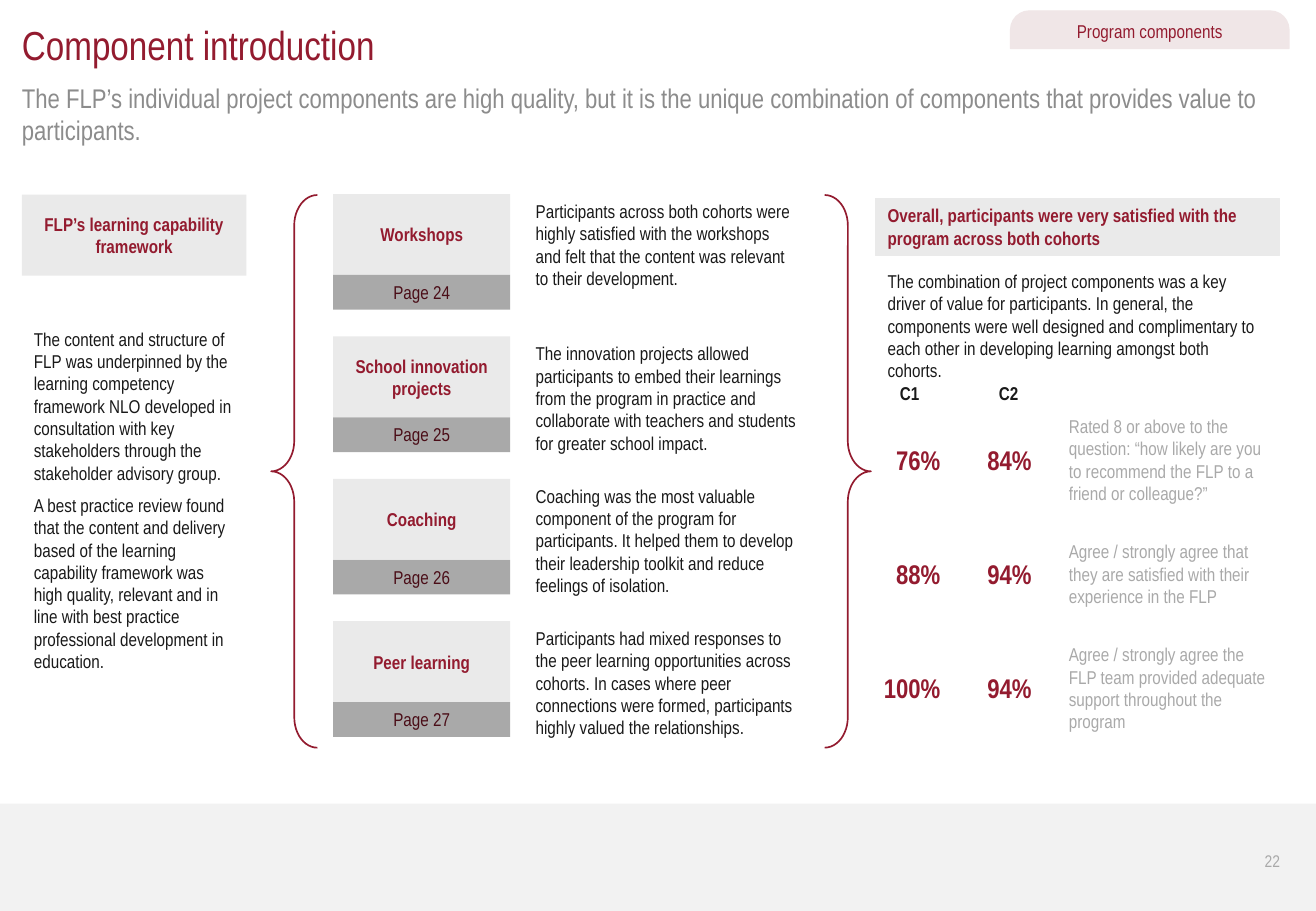
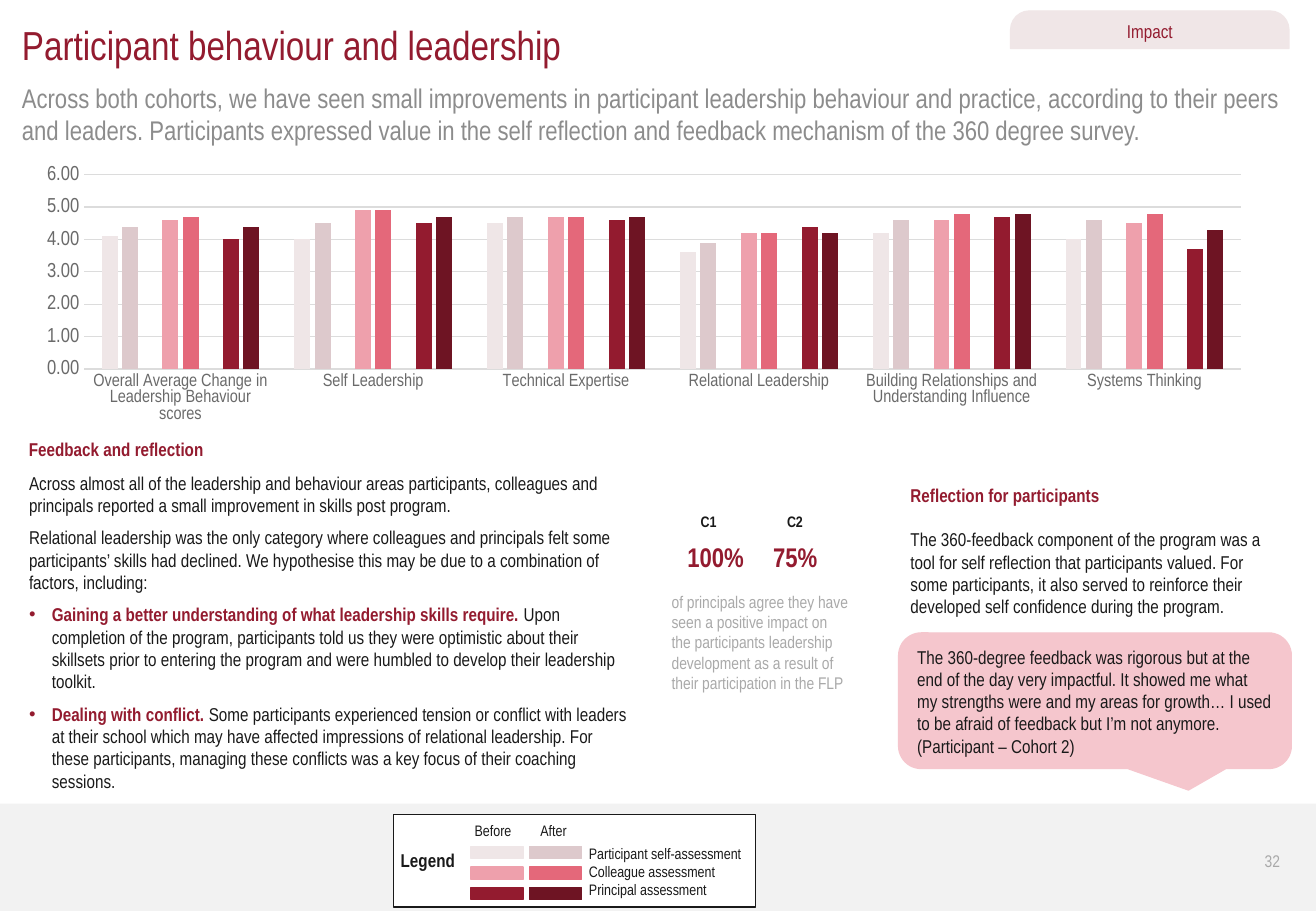
from lxml.etree import SubElement
from pptx import Presentation
from pptx.chart.data import CategoryChartData
from pptx.dml.color import RGBColor
from pptx.enum.chart import XL_CHART_TYPE, XL_TICK_MARK
from pptx.enum.shapes import MSO_SHAPE
from pptx.enum.text import MSO_ANCHOR, MSO_AUTO_SIZE, PP_ALIGN
from pptx.oxml.ns import qn
from pptx.util import Pt

FONT = "Arial Narrow"
CRIMSON, DARK_CRIMSON, INK = "931B2F", "4A0D17", "191919"
GREY, MID_GREY, AXIS_GREY, GRID_GREY = "8C8C8C", "A9A9A9", "6A6A6A", "DCDCDC"
PANEL, BAND, TAB, WHITE, PINK = "EAEAEA", "F2F2F2", "F0E6E7", "FFFFFF", "F5C6CD"
SELF_TINTS = ("EFE6E7", "DDC9CC")
COLLEAGUE_TINTS = ("EEA0AC", "E4687A")
PRINCIPAL_TINTS = (CRIMSON, "6E1423")
LEFT, CENTER, RIGHT = PP_ALIGN.LEFT, PP_ALIGN.CENTER, PP_ALIGN.RIGHT
TOP, MIDDLE, BOTTOM = MSO_ANCHOR.TOP, MSO_ANCHOR.MIDDLE, MSO_ANCHOR.BOTTOM
MARGIN = 13


def rgb(code):
    return RGBColor.from_string(code)


def points(*lengths):
    return [Pt(length) for length in lengths]


def style_font(font, size, color, bold=False):
    font.name = FONT
    font.size = Pt(size)
    font.bold = bold
    font.color.rgb = rgb(color)


def set_bullet(paragraph, bulleted):
    properties = paragraph._p.get_or_add_pPr()
    indent = Pt(13.5) if bulleted else 0
    properties.set("marL", str(indent))
    properties.set("indent", str(-indent))
    if bulleted:
        bullet_color = SubElement(properties, qn("a:buClr"))
        SubElement(bullet_color, qn("a:srgbClr"), val=CRIMSON)
        SubElement(properties, qn("a:buFont"), typeface="Arial")
        SubElement(properties, qn("a:buChar"), char="•")
    else:
        SubElement(properties, qn("a:buNone"))


def write(shape, *paragraphs, size=11, color=INK, bold=False, align=LEFT,
          anchor=TOP, inset=(7.2, 3.6), wrap=True, after=0):
    frame = shape.text_frame
    frame.auto_size = MSO_AUTO_SIZE.NONE
    frame.word_wrap = wrap
    frame.vertical_anchor = anchor
    frame.margin_left = frame.margin_right = Pt(inset[0])
    frame.margin_top = frame.margin_bottom = Pt(inset[1])
    for index, content in enumerate(paragraphs):
        paragraph = frame.add_paragraph() if index else frame.paragraphs[0]
        bulleted = not isinstance(content, str)
        if bulleted or shape.is_placeholder:
            set_bullet(paragraph, bulleted)
        paragraph.alignment = align
        paragraph.space_before = Pt(0)
        paragraph.space_after = Pt(after)
        for words, run_color, run_bold in content if bulleted else [(content, color, bold)]:
            run = paragraph.add_run()
            run.text = words
            style_font(run.font, size, run_color, run_bold)


def add_text(slide, box, *paragraphs, **style):
    write(slide.shapes.add_textbox(*points(*box)), *paragraphs, **style)


def fill_placeholder(placeholder, box, *paragraphs, **style):
    placeholder.left, placeholder.top, placeholder.width, placeholder.height = points(*box)
    write(placeholder, *paragraphs, **style)


def add_block(slide, preset, box, fill=None, line=None, weight=0.75, adjustments=()):
    block = slide.shapes.add_shape(preset, *points(*box))
    block.shadow.inherit = False
    if fill:
        block.fill.solid()
        block.fill.fore_color.rgb = rgb(fill)
    else:
        block.fill.background()
    if line:
        block.line.color.rgb = rgb(line)
        block.line.width = Pt(weight)
    else:
        block.line.fill.background()
    for index, value in enumerate(adjustments):
        block.adjustments[index] = value
    return block


def start_slide(deck, layout, title, message, section, number):
    slide = deck.slides.add_slide(deck.slide_layouts.get_by_name(layout))
    add_block(slide, MSO_SHAPE.RECTANGLE, (0, 476.4, 780, 63.6), BAND)
    fill_placeholder(slide.shapes.title, (MARGIN, 12, 754, 29), title,
                     size=24, color=CRIMSON, inset=(0, 0))
    fill_placeholder(slide.placeholders[1], (MARGIN, 48.3, 754, 39), message,
                     size=16, color=GREY, inset=(0, 0), after=6)
    tab = add_block(slide, MSO_SHAPE.ROUND_2_SAME_RECTANGLE, (599, 6.5, 165, 22.3),
                    TAB, TAB, adjustments=(0.5, 0))
    write(tab, section, color=CRIMSON, align=CENTER, anchor=BOTTOM, after=6)
    add_text(slide, (739.2, 495.8, 26.6, 29), number, size=10, color=MID_GREY,
             align=RIGHT, anchor=MIDDLE)
    return slide


def add_component(slide, top, name, page, finding):
    heading = add_block(slide, MSO_SHAPE.RECTANGLE, (197.5, top, 105, 48), PANEL)
    write(heading, name, color=CRIMSON, bold=True, align=CENTER, anchor=MIDDLE,
          inset=(5.7, 3.6))
    page_bar = add_block(slide, MSO_SHAPE.RECTANGLE, (197.5, top + 48, 105, 20.6), MID_GREY)
    write(page_bar, page, color=DARK_CRIMSON, align=CENTER)
    add_text(slide, (310.4, top, 170, 74), finding, after=6)


def add_rating(slide, top, scores, question):
    for column, score in enumerate(scores):
        add_text(slide, (509.5 + 54 * column, top + 17, 55, 26.6), score,
                 size=16, color=CRIMSON, bold=True, align=RIGHT)
    add_text(slide, (626.4, top, 137, 60.5), question, color=MID_GREY, anchor=MIDDLE)


def build_components(deck):
    slide = start_slide(
        deck, "Title and Content", "Component introduction",
        "The FLP’s individual project components are high quality, but it is the unique "
        "combination of components that provides value to participants.",
        "Program components", "22")
    framework = add_block(slide, MSO_SHAPE.RECTANGLE, (MARGIN, 115.4, 133, 48), PANEL)
    write(framework, "FLP’s learning capability framework", color=CRIMSON, bold=True,
          align=CENTER, anchor=MIDDLE)
    add_text(slide, (MARGIN, 190.8, 133, 213),
             "The content and structure of FLP was underpinned by the learning competency "
             "framework NLO developed in consultation with key stakeholders through the "
             "stakeholder advisory group.",
             "A best practice review found that the content and delivery based of the "
             "learning capability framework was high quality, relevant and in line with best "
             "practice professional development in education.", after=6)

    components = [
        ("Workshops", "Participants across both cohorts were highly satisfied with the "
         "workshops and felt that the content was relevant to their development."),
        ("School innovation projects", "The innovation projects allowed participants to "
         "embed their learnings from the program in practice and collaborate with teachers "
         "and students for greater school impact."),
        ("Coaching", "Coaching was the most valuable component of the program for "
         "participants. It helped them to develop their leadership toolkit and reduce "
         "feelings of isolation."),
        ("Peer learning", "Participants had mixed responses to the peer learning "
         "opportunities across cohorts. In cases where peer connections were formed, "
         "participants highly valued the relationships."),
    ]
    for row, (name, finding) in enumerate(components):
        add_component(slide, 115 + 84.4 * row, name, f"Page {24 + row}", finding)
    for brace, left in ((MSO_SHAPE.LEFT_BRACE, 160.7), (MSO_SHAPE.RIGHT_BRACE, 488.8)):
        add_block(slide, brace, (left, 115.6, 27.4, 327.6), line=CRIMSON, weight=1,
                  adjustments=(0.658, 0.5))

    overall = add_block(slide, MSO_SHAPE.RECTANGLE, (519, 117.6, 239.5, 33.8), PANEL, PANEL)
    write(overall, "Overall, participants were very satisfied with the program across both "
          "cohorts", color=CRIMSON, bold=True)
    add_text(slide, (519, 156.5, 239.5, 74),
             "The combination of project components was a key driver of value for "
             "participants. In general, the components were well designed and complimentary "
             "to each other in developing learning amongst both cohorts.", after=6)
    for left, cohort in ((526.3, "C1"), (585, "C2")):
        add_text(slide, (left, 222.7, 27, 20.6), cohort, bold=True, wrap=False)
    ratings = [
        (("76%", "84%"), "Rated 8 or above to the question: “how likely are you to recommend "
         "the FLP to a friend or colleague?”"),
        (("88%", "94%"), "Agree / strongly agree that they are satisfied with their "
         "experience in the FLP"),
        (("100%", "94%"), "Agree / strongly agree the FLP team provided adequate support "
         "throughout the program"),
    ]
    for row, (scores, question) in enumerate(ratings):
        add_rating(slide, 242.2 + 67.7 * row, scores, question)


def place_plot(chart, **fractions):
    plot_area = chart._chartSpace.chart.plotArea
    layout = plot_area.find(qn("c:layout"))
    if layout is None:
        layout = SubElement(plot_area, qn("c:layout"))
        plot_area.insert(0, layout)
    manual = SubElement(layout, qn("c:manualLayout"))
    settings = {"layoutTarget": "inner", "xMode": "edge", "yMode": "edge", **fractions}
    for tag, value in settings.items():
        SubElement(manual, qn(f"c:{tag}"), val=str(value))


def add_scores_chart(slide):
    blank = [None] * 6
    series = [
        (SELF_TINTS[0], [4.1, 4, 4.5, 3.6, 4.2, 4]),
        (SELF_TINTS[1], [4.4, 4.5, 4.7, 3.9, 4.6, 4.6]),
        (MID_GREY, blank),
        (COLLEAGUE_TINTS[0], [4.6, 4.9, 4.7, 4.2, 4.6, 4.5]),
        (COLLEAGUE_TINTS[1], [4.7, 4.9, 4.7, 4.2, 4.8, 4.8]),
        ("A7D146", blank),
        (PRINCIPAL_TINTS[0], [4, 4.5, 4.6, 4.4, 4.7, 3.7]),
        (PRINCIPAL_TINTS[1], [4.4, 4.7, 4.7, 4.2, 4.8, 4.3]),
    ]
    data = CategoryChartData(number_format="0.00")
    data.categories = [
        "Overall Average Change in Leadership Behaviour scores", "Self Leadership",
        "Technical Expertise", "Relational Leadership",
        "Building Relationships and Understanding Influence", "Systems Thinking"]
    for number, (_, scores) in enumerate(series, 1):
        data.add_series(f"Series {number}", scores)
    chart = slide.shapes.add_chart(XL_CHART_TYPE.COLUMN_CLUSTERED,
                                   *points(MARGIN, 94, 737.3, 160), data).chart
    style_font(chart.font, 10, INK)
    chart.has_legend = chart.has_title = False
    place_plot(chart, x=0.05, y=0.06, w=0.93, h=0.72)
    plot = chart.plots[0]
    plot.gap_width, plot.overlap, plot.vary_by_categories = 219, -27, False
    for bars, (tint, _) in zip(plot.series, series):
        bars.format.fill.solid()
        bars.format.fill.fore_color.rgb = rgb(tint)
    areas, scale = chart.category_axis, chart.value_axis
    for axis, size in ((areas, 10.5), (scale, 12)):
        axis.major_tick_mark = axis.minor_tick_mark = XL_TICK_MARK.NONE
        style_font(axis.tick_labels.font, size, AXIS_GREY)
    scale.minimum_scale, scale.maximum_scale, scale.major_unit = 0, 6, 1
    scale.tick_labels.number_format = "0.00"
    scale.tick_labels.number_format_is_linked = False
    scale.format.line.fill.background()
    for line in (areas.format.line, scale.major_gridlines.format.line):
        line.color.rgb = rgb(GRID_GREY)
        line.width = Pt(0.75)


def add_legend(slide):
    add_block(slide, MSO_SHAPE.RECTANGLE, (233.3, 483, 214.6, 54.7), WHITE, INK)
    add_text(slide, (230.4, 499.7, 46.8, 20.6), "Legend", bold=True, wrap=False)
    for left, width, moment in ((274.3, 38.9, "Before"), (313.2, 30.2, "After")):
        add_text(slide, (left, 483, width, 18), moment, size=9, wrap=False)
    assessors = [
        ("Participant self-assessment", 108, SELF_TINTS),
        ("Colleague assessment", 92.2, COLLEAGUE_TINTS),
        ("Principal assessment", 85, PRINCIPAL_TINTS),
    ]
    for row, (assessor, width, tints) in enumerate(assessors):
        for column, tint in enumerate(tints):
            add_block(slide, MSO_SHAPE.RECTANGLE,
                      (279.2 + 34.7 * column, 501.8 + 12.2 * row, 30.9, 7.2), tint, tint)
        add_text(slide, (342, 496.8 + 10.8 * row, width, 18), assessor, size=9, wrap=False)


def build_behaviour(deck):
    slide = start_slide(
        deck, "Two Content", "Participant behaviour and leadership",
        "Across both cohorts, we have seen small improvements in participant leadership "
        "behaviour and practice, according to their peers and leaders. Participants "
        "expressed value in the self reflection and feedback mechanism of the 360 degree "
        "survey.", "Impact", "32")
    add_scores_chart(slide)
    for box, heading in (((10, 256.3, 121, 20.6), "Feedback and reflection"),
                         ((532.6, 283.5, 129.6, 20.6), "Reflection for participants")):
        add_text(slide, box, heading, color=CRIMSON, bold=True, wrap=False)
    fill_placeholder(
        slide.placeholders[2], (10, 276, 371.5, 198.7),
        "Across almost all of the leadership and behaviour areas participants, colleagues "
        "and principals reported a small improvement in skills post program.",
        "Relational leadership was the only category where colleagues and principals felt "
        "some participants’ skills had declined. We hypothesise this may be due to a "
        "combination of factors, including:",
        [("Gaining a better understanding of what leadership skills require. ", CRIMSON, True),
         ("Upon completion of the program, participants told us they were optimistic about "
          "their skillsets prior to entering the program and were humbled to develop their "
          "leadership toolkit.", INK, False)],
        [("Dealing with conflict. ", CRIMSON, True),
         ("Some participants experienced tension or conflict with leaders at their school "
          "which may have affected impressions of relational leadership. For these "
          "participants, managing these conflicts was a key focus of their coaching "
          "sessions.", INK, False)], after=6)

    for cohort, cohort_left, share, share_left in (("C1", 408.2, "100%", 391.8),
                                                   ("C2", 459.4, "75%", 439)):
        add_text(slide, (cohort_left, 300.2, 24.5, 18), cohort, size=9, bold=True, wrap=False)
        add_text(slide, (share_left, 316.8, 64.8, 26.6), share, size=16, color=CRIMSON,
                 bold=True, align=CENTER)
    add_text(slide, (391, 347, 119.5, 67.7),
             "of principals agree they have seen a positive impact on the participants "
             "leadership development as a result of their participation in the FLP",
             size=10, color=MID_GREY)
    add_text(slide, (532.6, 309.6, 233.3, 60.5),
             "The 360-feedback component of the program was a tool for self reflection that "
             "participants valued. For some participants, it also served to reinforce their "
             "developed self confidence during the program.", after=6)
    quote = add_block(slide, MSO_SHAPE.ROUNDED_RECTANGULAR_CALLOUT, (532.6, 375.2, 232.8, 80.4),
                      PINK, PINK, adjustments=(0.238, 0.659, 0.167))
    write(quote, "The 360-degree feedback was rigorous but at the end of the day very "
          "impactful. It showed me what my strengths were and my areas for growth… I used to "
          "be afraid of feedback but I’m not anymore. (Participant – Cohort 2)", after=6)
    add_legend(slide)


def main():
    deck = Presentation()
    deck.slide_width, deck.slide_height = points(780, 540)
    build_components(deck)
    build_behaviour(deck)
    deck.save("out.pptx")


if __name__ == "__main__":
    main()
